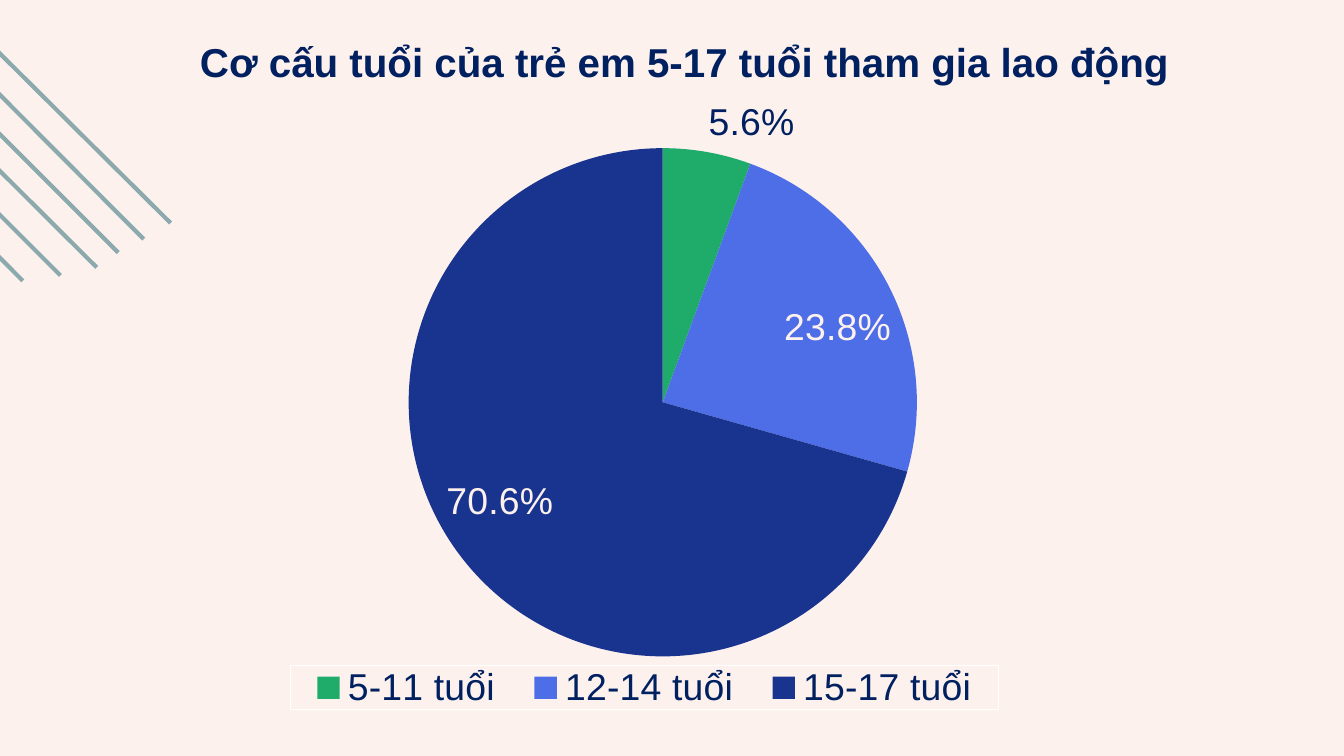
from dataclasses import dataclass

from lxml.etree import SubElement
from pptx import Presentation
from pptx.chart.data import CategoryChartData
from pptx.dml.color import RGBColor as Rgb
from pptx.enum.chart import XL_CHART_TYPE as ChartType
from pptx.enum.chart import XL_LABEL_POSITION as LabelPos
from pptx.enum.chart import XL_LEGEND_POSITION as LegendPos
from pptx.enum.shapes import MSO_CONNECTOR as Connector
from pptx.enum.text import MSO_ANCHOR as Anchor
from pptx.enum.text import MSO_AUTO_SIZE as AutoSize
from pptx.enum.text import PP_ALIGN as Align
from pptx.oxml import parse_xml
from pptx.oxml.ns import nsdecls, qn
from pptx.util import Inches, Pt


@dataclass(frozen=True)
class Theme:
    font: str = "Arial"
    paper: str = "FDF1EE"
    ink: str = "002060"
    stripe: str = "8CA9AD"
    legend_border: str = "FFFFFF"
    slices: tuple = ("1FAB6A", "4E6EE8", "19348E")
    title_size: float = 21.6
    title_leading: float = 27.7
    base_size: float = 10
    chart_size: float = 20
    stripe_width: float = 2.25


THEME = Theme()
WIDTH = 10
HEIGHT = WIDTH * 9 / 16
TITLE = "Cơ cấu tuổi của trẻ em 5-17 tuổi tham gia lao động"
AGE_SHARES = {"5-11 tuổi": 5.6, "12-14 tuổi": 23.8, "15-17 tuổi": 70.6}
STRIPES = [
    ((-1.56, -1.15), (1.27, 1.66)),
    ((-1.68, -0.98), (1.07, 1.78)),
    ((-1.78, -0.78), (0.88, 1.88)),
    ((-1.85, -0.57), (0.72, 1.99)),
    ((-1.93, -0.33), (0.45, 2.05)),
    ((-1.99, -0.09), (0.17, 2.09)),
]
PERCENT_FORMAT = "0.0%"


def apply(target, values):
    for name, value in values.items():
        setattr(target, name, value)


def style_font(font, size, color, bold=False):
    apply(font, {"name": THEME.font, "size": Pt(size), "bold": bold})
    font.color.rgb = Rgb.from_string(color)


def place(shape, left, top, width, height):
    apply(shape, {"left": Inches(left), "top": Inches(top),
                  "width": Inches(width), "height": Inches(height)})


def add_stripe(slide, start, end):
    ends = [Inches(value) for value in (*start, *end)]
    stripe = slide.shapes.add_connector(Connector.STRAIGHT, *ends)
    stripe.line.color.rgb = Rgb.from_string(THEME.stripe)
    stripe.line.width = Pt(THEME.stripe_width)
    SubElement(stripe._element.spPr, qn("a:effectLst"))


def set_title(slide):
    title = slide.shapes.title
    place(title, 0.57, 0.25, 9.05, 0.36)
    frame = title.text_frame
    apply(frame, {"margin_left": 0, "margin_right": 0, "margin_top": 0,
                  "margin_bottom": 0, "word_wrap": True,
                  "vertical_anchor": Anchor.TOP,
                  "auto_size": AutoSize.SHAPE_TO_FIT_TEXT})
    para = frame.paragraphs[0]
    apply(para, {"alignment": Align.CENTER,
                 "line_spacing": Pt(THEME.title_leading)})
    span = para.add_run()
    span.text = TITLE
    style_font(span.font, THEME.title_size, THEME.ink, bold=True)


def set_layout(parent, index, shares, inner=False):
    """Fix a chart part at x, y, w, h, given as shares of the chart."""
    for old in parent.findall(qn("c:layout")):
        parent.remove(old)
    layout = parse_xml(f"<c:layout {nsdecls('c')}><c:manualLayout/></c:layout>")
    values = {"layoutTarget": "inner"} if inner else {}
    values |= {"xMode": "edge", "yMode": "edge"}
    values |= dict(zip("xywh", shares))
    for name, value in values.items():
        SubElement(layout[0], qn(f"c:{name}")).set("val", str(value))
    parent.insert(index, layout)


def style_legend(chart):
    chart.has_legend = True
    legend = chart.legend
    apply(legend, {"position": LegendPos.BOTTOM, "include_in_layout": False})
    style_font(legend.font, THEME.chart_size, THEME.ink)
    element = legend._element
    set_layout(element, 1, (0.09, 0.91, 0.79, 0.07))
    element.find(qn("c:overlay")).addnext(parse_xml(
        f"<c:spPr {nsdecls('c', 'a')}><a:ln w='9525'><a:solidFill>"
        f"<a:srgbClr val='{THEME.legend_border}'/></a:solidFill></a:ln>"
        "</c:spPr>"))


def style_labels(plot):
    labels = plot.series[0].data_labels
    apply(labels, {"show_percentage": True, "show_value": False,
                   "number_format": PERCENT_FORMAT,
                   "number_format_is_linked": False,
                   "position": LabelPos.BEST_FIT})
    style_font(labels.font, THEME.chart_size, THEME.paper)


def style_outside_label(point):
    """Put a thin slice's percentage outside, in the dark colour."""
    label = point.data_label
    style_font(label.font, THEME.chart_size, THEME.ink)
    label.position = LabelPos.OUTSIDE_END
    element = point._ser.find(f"{qn('c:dLbls')}/{qn('c:dLbl')}")
    for name, shown in {"showVal": "0", "showPercent": "1"}.items():
        element.find(qn(f"c:{name}")).set("val", shown)
    first = element.find(qn("c:spPr"))
    if first is None:
        first = element.find(qn("c:txPr"))
    first.addprevious(parse_xml(
        f"<c:numFmt {nsdecls('c')} formatCode='{PERCENT_FORMAT}' "
        "sourceLinked='0'/>"))


def add_age_pie(slide):
    data = CategoryChartData()
    data.categories = list(AGE_SHARES)
    data.add_series("Series 1", list(AGE_SHARES.values()))
    area = [Inches(value) for value in (1.56, 0.72, 6.67, 4.67)]
    chart = slide.shapes.add_chart(ChartType.PIE, *area, data).chart
    chart.has_title = False
    style_font(chart.font, THEME.base_size, THEME.ink)
    plot = chart.plots[0]
    plot.vary_by_categories = False
    points = plot.series[0].points
    for index, color in enumerate(THEME.slices):
        fill = points[index].format.fill
        fill.solid()
        fill.fore_color.rgb = Rgb.from_string(color)
    style_labels(plot)
    style_outside_label(points[0])
    style_legend(chart)
    plot_area = chart._chartSpace.chart.plotArea
    set_layout(plot_area, 0, (0.222, 0.082, 0.567, 0.81), inner=True)


def main():
    deck = Presentation()
    apply(deck, {"slide_width": Inches(WIDTH), "slide_height": Inches(HEIGHT)})
    slide = deck.slides.add_slide(deck.slide_layouts.get_by_name("Title Only"))
    background = slide.background.fill
    background.solid()
    background.fore_color.rgb = Rgb.from_string(THEME.paper)
    for start, end in STRIPES:
        add_stripe(slide, start, end)
    set_title(slide)
    add_age_pie(slide)
    deck.save("out.pptx")


if __name__ == "__main__":
    main()
